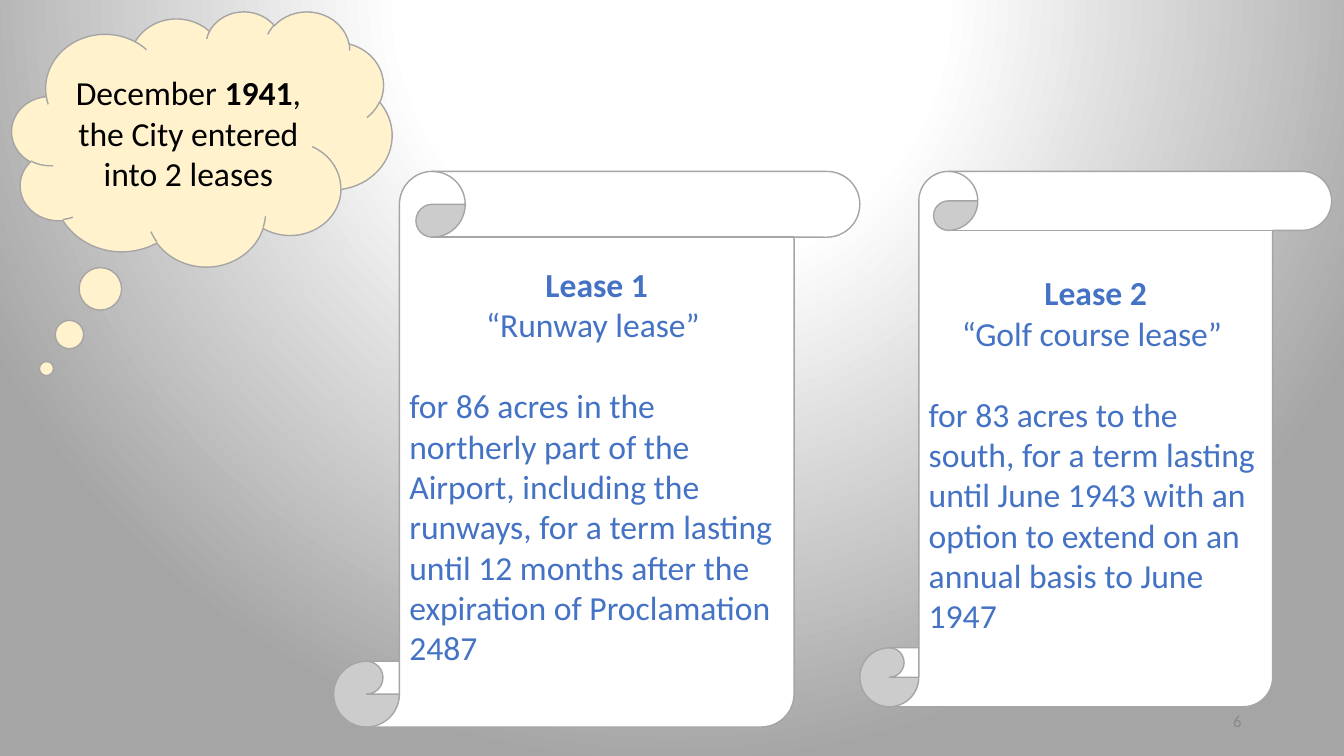
import pptx
import pptx.oxml
import pptx.oxml.ns
from pptx.dml.color import RGBColor
from pptx.enum.shapes import MSO_SHAPE
from pptx.enum.text import MSO_ANCHOR, PP_ALIGN
from pptx.util import Cm, Pt

COLORS = {"cloud": "FFF2CC", "paper": "FFFFFF", "edge": "A5A5A5",
          "black": "000000", "lease": "4472C4", "number": "898989"}
FONT = "Calibri"
BODY_SIZE = 24
BACKGROUND_STOPS = [(0, "paper"), (35, "paper"), (100, "edge")]

# A paragraph is (alignment, space before in points, [(text, bold), ...]).
CLOUD_BOX = (0.3, 0.28, 9.58, 6.43)
CLOUD_TAIL = (-0.409, 0.901)
CLOUD_TEXT = [(PP_ALIGN.CENTER, 0, [
    ("December ", False), ("1941", True),
    (", the City entered into 2 leases", False)])]

LEASES = [
    ((8.41, 4.32, 13.26, 14.0), "Lease 1", "“Runway lease” ",
     "for 86 acres in the northerly part of the Airport, including the "
     "runways, for a term lasting until 12 months after the expiration of "
     "Proclamation 2487"),
    ((21.67, 4.32, 11.89, 13.49), "Lease 2", "“Golf course lease” ",
     "for 83 acres to the south, for a term lasting until June 1943 with an "
     "option to extend on an annual basis to June 1947"),
]
TERMS_GAP = 29

NUMBER_BOX = (23.92, 17.65, 7.62, 1.01)
NUMBER_TEXT = [(PP_ALIGN.RIGHT, 0, [("6", False)])]


def color(name):
    return RGBColor.from_string(COLORS[name])


def set_background(slide):
    """Give the slide a circular gradient centred above its top edge."""
    stops = "".join(
        f'<a:gs pos="{percent * 1000}"><a:srgbClr val="{COLORS[name]}"/></a:gs>'
        for percent, name in BACKGROUND_STOPS)
    background = pptx.oxml.parse_xml(
        f'<p:bg {pptx.oxml.ns.nsdecls("p", "a")}><p:bgPr>'
        f'<a:gradFill rotWithShape="1"><a:gsLst>{stops}</a:gsLst>'
        '<a:path path="circle">'
        '<a:fillToRect l="50000" t="-80000" r="50000" b="180000"/>'
        '</a:path></a:gradFill><a:effectLst/></p:bgPr></p:bg>')
    slide.element.cSld.insert(0, background)


def write(box, paragraphs, color_name, size=BODY_SIZE):
    frame = box.text_frame
    frame.word_wrap = True
    frame.vertical_anchor = MSO_ANCHOR.MIDDLE
    for index, (alignment, gap, spans) in enumerate(paragraphs):
        para = frame.add_paragraph() if index else frame.paragraphs[0]
        para.alignment = alignment
        if gap:
            para.space_before = Pt(gap)
        for text, bold in spans:
            span = para.add_run()
            span.text = text
            span.font.name = FONT
            span.font.size = Pt(size)
            span.font.bold = bold
            span.font.color.rgb = color(color_name)


def add_outlined(slide, preset, place, fill_name):
    shape = slide.shapes.add_shape(preset, *map(Cm, place))
    shape.shadow.inherit = False
    shape.fill.solid()
    shape.fill.fore_color.rgb = color(fill_name)
    shape.line.color.rgb = color("edge")
    shape.line.width = Pt(1)
    return shape


def main():
    deck = pptx.Presentation()
    deck.slide_width, deck.slide_height = Cm(33.87), Cm(19.05)
    slide = deck.slides.add_slide(deck.slide_layouts[6])
    set_background(slide)

    cloud = add_outlined(slide, MSO_SHAPE.CLOUD_CALLOUT, CLOUD_BOX, "cloud")
    for index, offset in enumerate(CLOUD_TAIL):
        cloud.adjustments[index] = offset
    write(cloud, CLOUD_TEXT, "black")

    for place, title, nickname, terms in LEASES:
        scroll = add_outlined(slide, MSO_SHAPE.VERTICAL_SCROLL, place, "paper")
        write(scroll, [(PP_ALIGN.CENTER, 0, [(title, True)]),
                       (PP_ALIGN.CENTER, 0, [(nickname, False)]),
                       (PP_ALIGN.LEFT, TERMS_GAP, [(terms, False)])], "lease")

    number = slide.shapes.add_textbox(*map(Cm, NUMBER_BOX))
    write(number, NUMBER_TEXT, "number", 12)
    deck.save("out.pptx")


if __name__ == "__main__":
    main()
